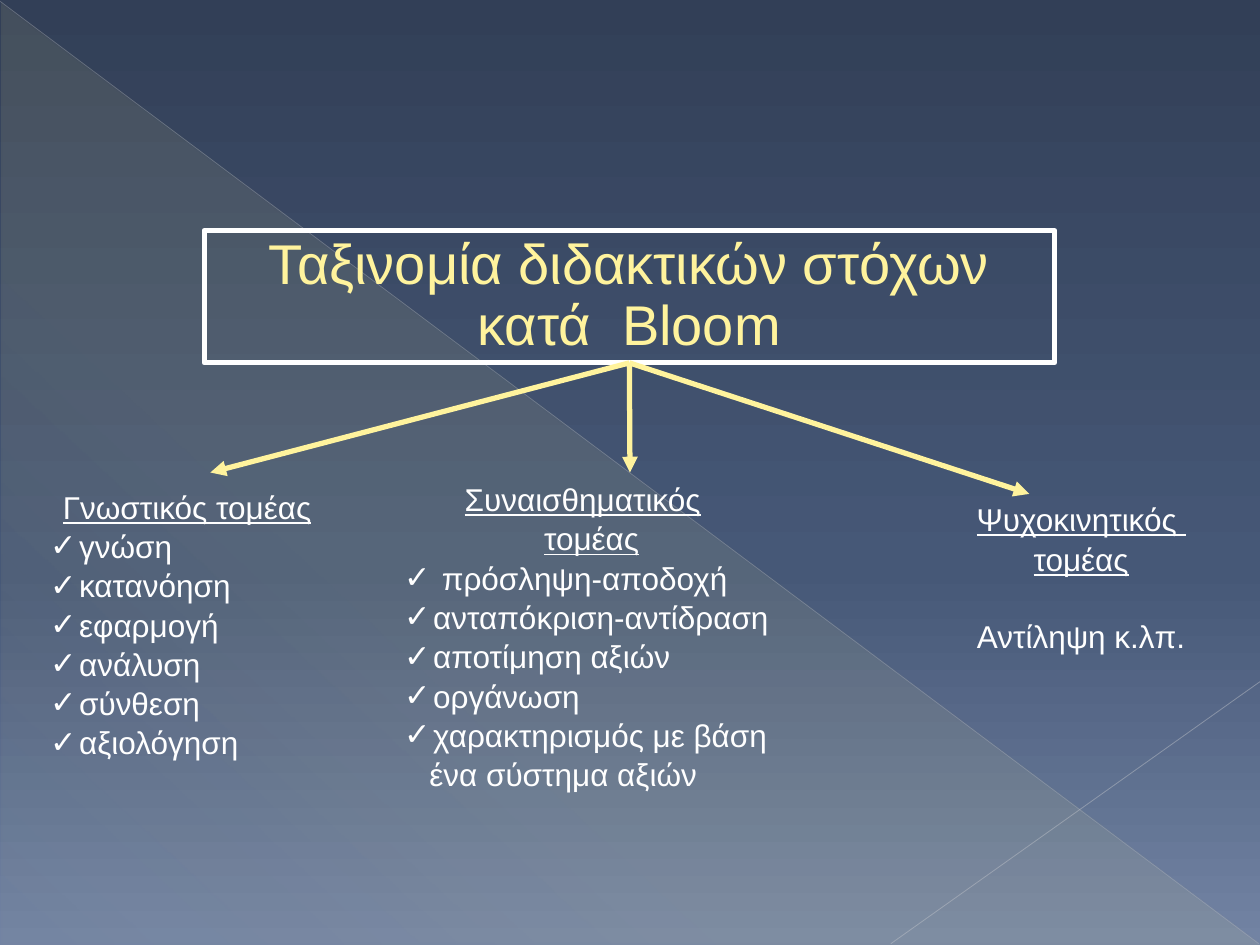
from lxml import etree
from pptx import Presentation
from pptx.dml.color import RGBColor
from pptx.enum.shapes import MSO_CONNECTOR, MSO_SHAPE
from pptx.enum.text import MSO_ANCHOR, PP_ALIGN
from pptx.oxml.ns import qn
from pptx.util import Inches, Pt

STRAIGHT = MSO_CONNECTOR.STRAIGHT
RECTANGLE, TRIANGLE = MSO_SHAPE.RECTANGLE, MSO_SHAPE.RIGHT_TRIANGLE
MIDDLE, TOP = MSO_ANCHOR.MIDDLE, MSO_ANCHOR.TOP
CENTER, LEFT = PP_ALIGN.CENTER, PP_ALIGN.LEFT
BOTTOM_SIDE = 2

WHITE = RGBColor(0xFF, 0xFF, 0xFF)
YELLOW = RGBColor(0xFF, 0xF3, 0x9D)
NIGHT = RGBColor(0x32, 0x3F, 0x57)
SLATE = RGBColor(0x46, 0x58, 0x77)
HAZE = RGBColor(0x72, 0x83, 0xA3)
SILVER = RGBColor(0xBA, 0xBD, 0xC4)
PALE = RGBColor(0xC1, 0xC4, 0xCA)


def child(parent, tag, **attributes):
    """Append a drawing element and return it."""
    values = {name: str(value) for name, value in attributes.items()}
    return etree.SubElement(parent, qn(tag), values)


def set_gradient(fill, properties, stops, angle):
    """Swap a solid fill for a gradient of (position, colour, opacity) stops."""
    fill.solid()
    solid = properties.find(qn("a:solidFill"))
    gradient = etree.Element(qn("a:gradFill"), rotWithShape="1")
    stop_list = child(gradient, "a:gsLst")
    for position, colour, opacity in stops:
        stop = child(stop_list, "a:gs", pos=position * 1000)
        shade = child(stop, "a:srgbClr", val=colour)
        child(shade, "a:alpha", val=opacity * 1000)
    child(gradient, "a:lin", ang=angle * 60000, scaled=0)
    properties.replace(solid, gradient)


def write(paragraph, text, size=18, colour=WHITE, align=LEFT, spacing=1.04,
          before=0, underline=False, bullet=None, margin=0, font="Arial"):
    """Fill one paragraph with formatted text."""
    properties = paragraph._p.get_or_add_pPr()
    properties.set("marL", str(Inches(margin)))
    properties.set("indent", str(-Inches(margin) if bullet else 0))
    if bullet:
        child(properties, "a:buFont", typeface=font)
        child(properties, "a:buChar", char=bullet)
    paragraph.alignment = align
    paragraph.line_spacing = spacing
    paragraph.space_before = Pt(before)
    run = paragraph.add_run()
    run.text = text
    run.font.name, run.font.size = font, Pt(size)
    run.font.color.rgb, run.font.underline = colour, underline


class Board:
    """Draws elements on a slide divided into 100 columns and 75 rows."""

    def __init__(self, presentation):
        self.column = presentation.slide_width / 100
        self.row = presentation.slide_height / 75
        self.slide = presentation.slides.add_slide(presentation.slide_layouts[6])
        self.shapes = self.slide.shapes

    def place(self, *grid):
        """Turn alternating columns and rows into lengths."""
        units = (self.column, self.row) * 2
        return [round(value * unit) for value, unit in zip(grid, units)]

    def background(self, stops, angle):
        """Paint the slide with a gradient."""
        fill = self.slide.background.fill
        fill.solid()
        properties = self.slide._element.cSld.find(".//" + qn("p:bgPr"))
        set_gradient(fill, properties, stops, angle)

    def triangle(self, grid, stops, angle):
        """Add a right triangle with a gradient."""
        shape = self.shapes.add_shape(TRIANGLE, *self.place(*grid))
        shape.shadow.inherit = False
        shape.line.fill.background()
        set_gradient(shape.fill, shape._element.spPr, stops, angle)

    def line(self, grid, colour, width, opacity=100, arrow=False, source=None):
        """Add a straight line, joined to the bottom of a source if given."""
        line = self.shapes.add_connector(STRAIGHT, *self.place(*grid))
        if source is not None:
            line.begin_connect(source, BOTTOM_SIDE)
        line.line.color.rgb, line.line.width = colour, Pt(width)
        properties = line._element.spPr
        child(properties.find(".//" + qn("a:srgbClr")), "a:alpha", val=opacity * 1000)
        if arrow:
            child(properties.find(qn("a:ln")), "a:tailEnd", type="triangle")
        child(properties, "a:effectLst")

    def fill_text(self, shape, paragraphs, anchor=TOP, wrap=True):
        """Write (text, format) pairs into a shape."""
        frame = shape.text_frame
        frame.word_wrap, frame.vertical_anchor = wrap, anchor
        for index, (text, style) in enumerate(paragraphs):
            paragraph = frame.add_paragraph() if index else frame.paragraphs[0]
            write(paragraph, text, **style)

    def frame(self, grid, paragraphs):
        """Add an outlined box with text and return it."""
        shape = self.shapes.add_shape(RECTANGLE, *self.place(*grid))
        shape.shadow.inherit = False
        shape.fill.background()
        shape.line.color.rgb, shape.line.width = WHITE, Pt(3)
        self.fill_text(shape, paragraphs, MIDDLE)
        return shape

    def text(self, grid, paragraphs, wrap=True):
        """Add a text box."""
        self.fill_text(self.shapes.add_textbox(*self.place(*grid)), paragraphs, wrap=wrap)


def main():
    """Build the slide."""
    presentation = Presentation()
    presentation.slide_width, presentation.slide_height = Inches(10), Inches(7.5)
    board = Board(presentation)

    board.background([(0, NIGHT, 100), (60, SLATE, 100), (100, HAZE, 100)], 90)
    board.triangle((0.1, 0.2, 99.9, 74.8),
                   [(0, YELLOW, 10), (70, YELLOW, 8), (100, YELLOW, 1)], 133)
    board.line((0, 0.1, 99.9, 74.9), SILVER, 0.39, 35)
    board.line((100, 54.1, 70.7, 74.9), PALE, 0.47, 45)

    title = dict(size=32, colour=YELLOW, align=CENTER, spacing=0.9)
    heading = dict(align=CENTER, underline=True)
    item = dict(bullet="✓", margin=0.23)

    title_box = board.frame((16.2, 18.3, 67.5, 10.5), [
        ("Ταξινομία διδακτικών στόχων", title), ("κατά  Bloom", title)])

    cognitive = ["γνώση", "κατανόηση", "εφαρμογή", "ανάλυση", "σύνθεση", "αξιολόγηση"]
    board.text((3, 38.1, 23.7, 33),
               [("Γνωστικός τομέας", heading)] + [(text, item) for text in cognitive])

    affective = [" πρόσληψη-αποδοχή", "ανταπόκριση-αντίδραση", "αποτίμηση αξιών",
                 "οργάνωση", "χαρακτηρισμός με βάση"]
    board.text((31.1, 37.5, 41, 33), [
        ("Συναισθηματικός", dict(underline=True, margin=0.48)),
        ("τομέας", dict(underline=True, margin=1.11)),
        *[(text, item) for text in affective],
        ("ένα σύστημα αξιών", dict(margin=0.2))])

    board.text((76.4, 39.1, 18.8, 16.2), [
        ("Ψυχοκινητικός ", heading), ("τομέας", heading),
        ("Αντίληψη κ.λπ.", dict(align=CENTER, before=21.6))], wrap=False)

    for column, row in ((16.7, 37.5), (50, 37.5), (81.7, 39.2)):
        board.line((50, 28.8, column, row), YELLOW, 3, arrow=True, source=title_box)

    presentation.save("out.pptx")


if __name__ == "__main__":
    main()
